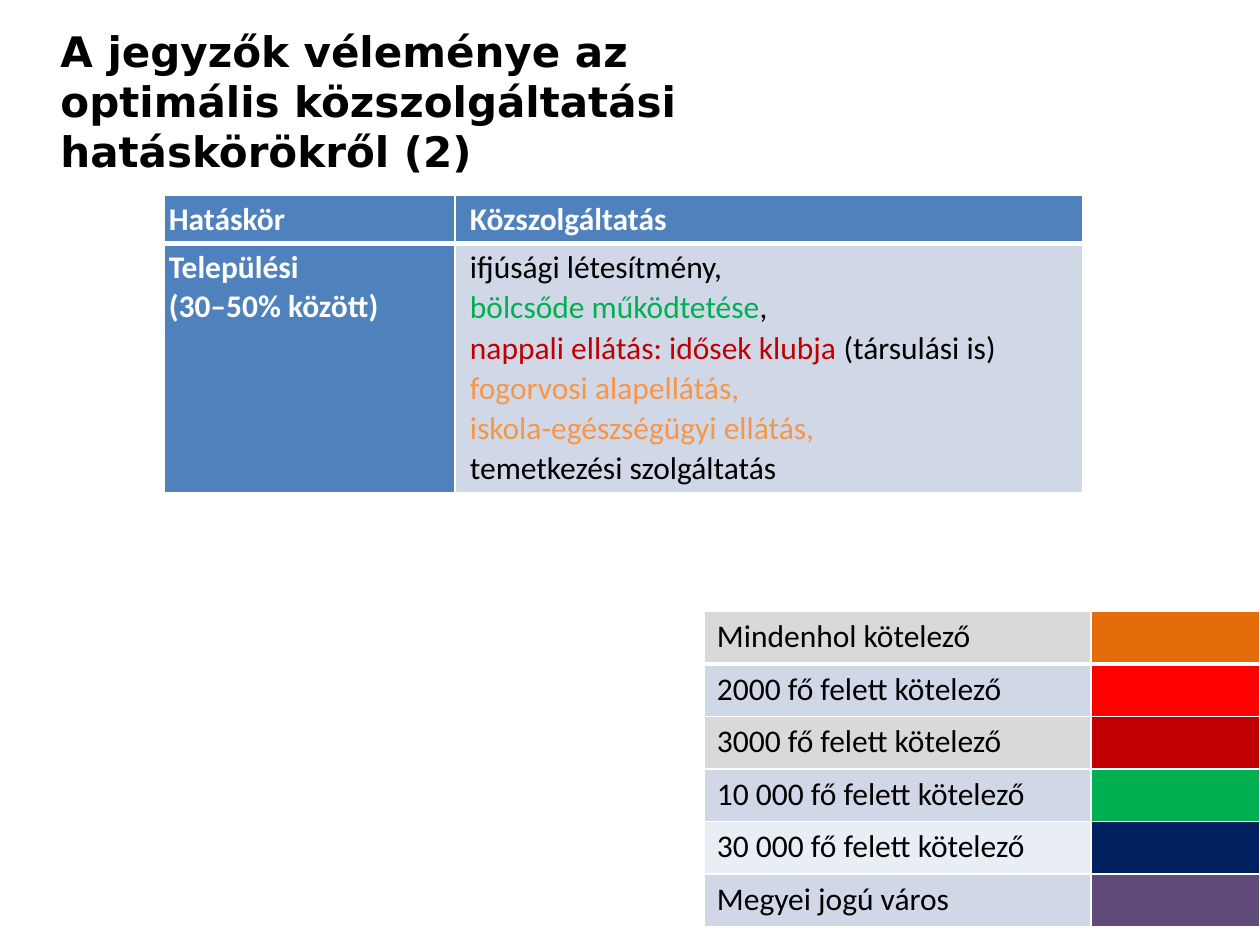
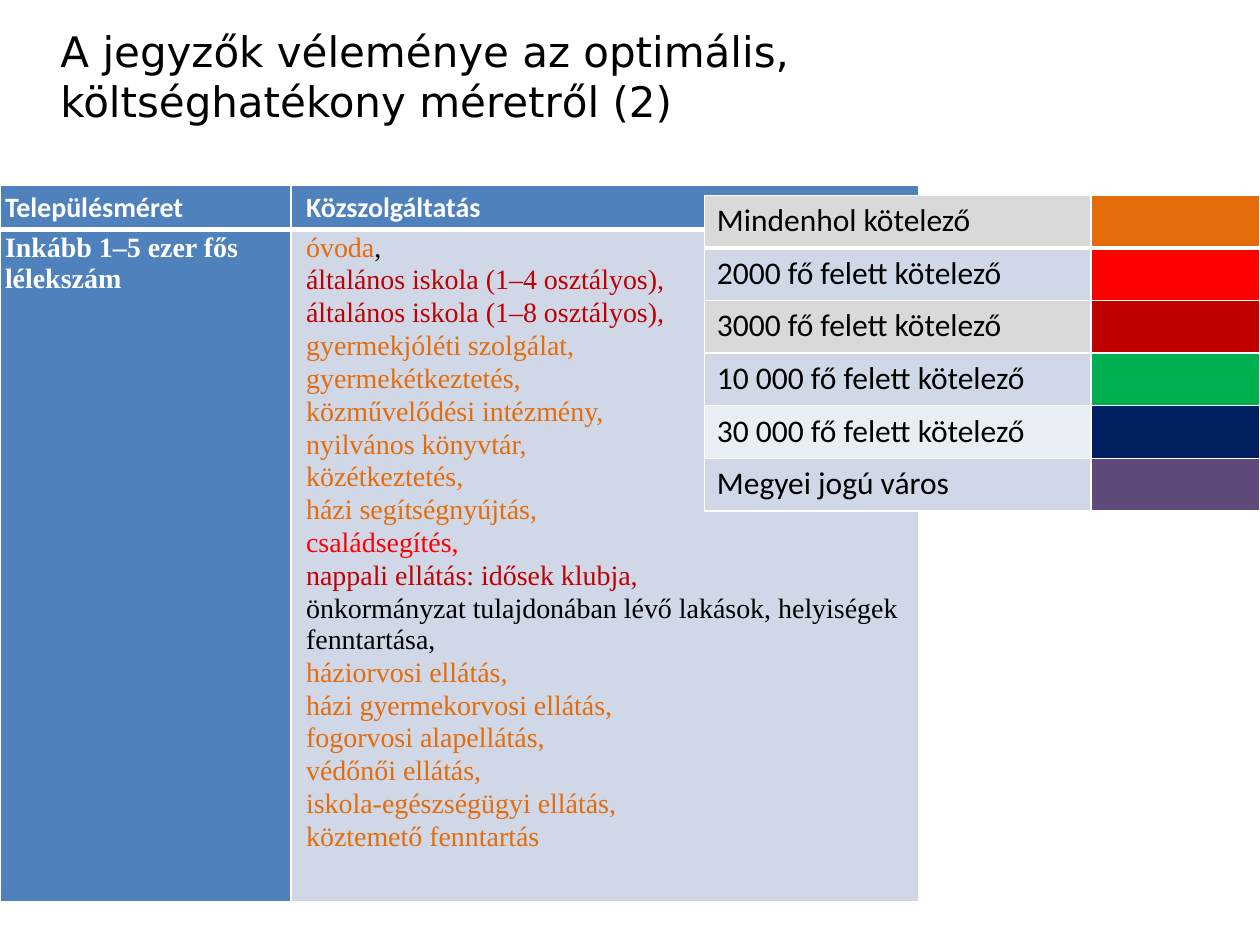
from dataclasses import dataclass

from lxml import etree
from pptx import Presentation
from pptx.dml.color import RGBColor
from pptx.enum.text import MSO_ANCHOR
from pptx.oxml.ns import qn
from pptx.slide import Slide
from pptx.table import Table, _Cell
from pptx.text.text import TextFrame
from pptx.util import Inches, Pt

MIDDLE, TOP = MSO_ANCHOR.MIDDLE, MSO_ANCHOR.TOP
WIDTH, HEIGHT = Inches(10), Inches(7.5)
BLANK_LAYOUT = 6

WHITE, BLACK = "FFFFFF", "000000"
HEADER_BLUE, PALE_BLUE, FAINT_BLUE, GRAY = "4F81BD", "D0D8E8", "E9EDF4", "D9D9D9"
ORANGE, LIGHT_ORANGE, RED, DARK_RED = "E46C0A", "F79646", "FF0000", "C00000"
GREEN, NAVY, PURPLE = "00B050", "002060", "604A7B"
SANS, SERIF, TITLE_FONT = "Calibri", "Times New Roman", "DejaVu Sans"

TITLE_BOX = (0, 0.02, 0.642, 0.095)
SERVICE_COLUMNS = (0.231, 0.498)
LEGEND_COLUMNS = (0.307, 0.134)
LEGEND_LEFT = 1 - sum(LEGEND_COLUMNS)
LEGEND_ROW = 0.0556


@dataclass(frozen=True)
class Piece:
    text: str
    color: str = BLACK


@dataclass(frozen=True)
class LegendRow:
    label: str
    fill: str
    swatch: str


@dataclass(frozen=True)
class ServiceTable:
    left: float
    top: float
    rows: tuple[float, float]
    heading: str
    category: str
    size: int
    body_font: str
    body_margin: float
    services: list[list[Piece]]


@dataclass(frozen=True)
class Page:
    title: str
    title_bold: bool
    table: ServiceTable
    legend_top: float


LEGEND = [
    LegendRow("Mindenhol kötelező", GRAY, ORANGE),
    LegendRow("2000 fő felett kötelező", PALE_BLUE, RED),
    LegendRow("3000 fő felett kötelező", GRAY, DARK_RED),
    LegendRow("10 000 fő felett kötelező", PALE_BLUE, GREEN),
    LegendRow("30 000 fő felett kötelező", FAINT_BLUE, NAVY),
    LegendRow("Megyei jogú város", PALE_BLUE, PURPLE),
]


def lines(color: str, *texts: str) -> list[list[Piece]]:
    return [[Piece(text, color)] for text in texts]


PAGES = [
    Page(
        "A jegyzők véleménye az optimális közszolgáltatási hatáskörökről (2)",
        True,
        ServiceTable(
            0.13, 0.207, (0.051, 0.263), "Hatáskör",
            "Települési\v(30–50% között)", 18, SANS, 0.04,
            [
                *lines(BLACK, "ifjúsági létesítmény,"),
                [Piece("bölcsőde működtetése", GREEN), Piece(",")],
                [Piece("nappali ellátás: idősek klubja", DARK_RED),
                 Piece(" (társulási is)")],
                *lines(LIGHT_ORANGE, "fogorvosi alapellátás,",
                       "iskola-egészségügyi ellátás,"),
                *lines(BLACK, "temetkezési szolgáltatás"),
            ],
        ),
        0.647,
    ),
    Page(
        "A jegyzők véleménye az optimális, költséghatékony méretről (2)",
        False,
        ServiceTable(
            0, 0.196, (0.047, 0.661), "Településméret",
            "Inkább 1–5 ezer fős lélekszám", 16, SERIF, 0.02,
            [
                [Piece("óvoda", ORANGE), Piece(",")],
                *lines(DARK_RED, "általános iskola (1–4 osztályos),",
                       "általános iskola (1–8 osztályos),"),
                *lines(ORANGE, "gyermekjóléti szolgálat,", "gyermekétkeztetés,",
                       "közművelődési intézmény,", "nyilvános könyvtár,",
                       "közétkeztetés,", "házi segítségnyújtás,"),
                *lines(RED, "családsegítés,"),
                *lines(DARK_RED, "nappali ellátás: idősek klubja,"),
                *lines(BLACK, "önkormányzat tulajdonában lévő lakások, "
                              "helyiségek fenntartása,"),
                *lines(ORANGE, "háziorvosi ellátás,", "házi gyermekorvosi ellátás,",
                       "fogorvosi alapellátás,", "védőnői ellátás,",
                       "iskola-egészségügyi ellátás,", "köztemető fenntartás"),
            ],
        ),
        0.207,
    ),
]


def rgb(color: str) -> RGBColor:
    return RGBColor.from_string(color)


def across(share: float) -> int:
    return round(WIDTH * share)


def down(share: float) -> int:
    return round(HEIGHT * share)


def apply(target: object, formats: dict) -> None:
    for name, value in formats.items():
        setattr(target, name, value)


def write(frame: TextFrame, paragraphs: list[list[Piece]], font: str, size: int,
          bold: bool = False) -> None:
    for index, pieces in enumerate(paragraphs):
        paragraph = frame.add_paragraph() if index else frame.paragraphs[0]
        if index:
            paragraph.space_before = Pt(1)
        for piece in pieces:
            for part, text in enumerate(piece.text.split("\v")):
                if part:
                    paragraph.add_line_break()
                run = paragraph.add_run()
                run.text = text
                apply(run.font, {"name": font, "size": Pt(size), "bold": bold})
                run.font.color.rgb = rgb(piece.color)


def style_cell(cell: _Cell, fill: str, is_header: bool) -> None:
    properties = cell._tc.get_or_add_tcPr()
    for side in "LRTB":
        points = 3 if is_header and side == "B" else 1
        border = etree.SubElement(properties, qn(f"a:ln{side}"), w=str(Pt(points)))
        solid = etree.SubElement(border, qn("a:solidFill"))
        etree.SubElement(solid, qn("a:srgbClr"), val=WHITE)
    cell.fill.solid()
    cell.fill.fore_color.rgb = rgb(fill)


def add_grid(slide: Slide, left: float, top: float, columns: tuple[float, ...],
             rows: tuple[float, ...], fills: list[tuple[str, str]]) -> Table:
    table = slide.shapes.add_table(
        len(rows), len(columns), across(left), down(top),
        across(sum(columns)), down(sum(rows))).table
    apply(table, {"first_row": False, "horz_banding": False})
    for column, share in zip(table.columns, columns):
        column.width = across(share)
    for row, share in zip(table.rows, rows):
        row.height = down(share)
    for row_index, row_fills in enumerate(fills):
        for column_index, fill in enumerate(row_fills):
            style_cell(table.cell(row_index, column_index), fill, row_index == 0)
    return table


def add_title(slide: Slide, title: str, bold: bool) -> None:
    left, top, width, height = TITLE_BOX
    frame = slide.shapes.add_textbox(
        across(left), down(top), across(width), down(height)).text_frame
    apply(frame, {"word_wrap": True, "margin_left": Inches(0.48)})
    write(frame, [[Piece(title)]], TITLE_FONT, 24, bold)


def add_services(slide: Slide, content: ServiceTable) -> None:
    table = add_grid(slide, content.left, content.top, SERVICE_COLUMNS, content.rows,
                     [(HEADER_BLUE, HEADER_BLUE), (HEADER_BLUE, PALE_BLUE)])
    texts = [
        [lines(WHITE, content.heading), lines(WHITE, "Közszolgáltatás")],
        [lines(WHITE, content.category), content.services],
    ]
    row_styles = [(SANS, 0.04, MIDDLE), (content.body_font, content.body_margin, TOP)]
    for row, (font, margin, anchor) in enumerate(row_styles):
        for column, paragraphs in enumerate(texts[row]):
            cell = table.cell(row, column)
            apply(cell, {
                "margin_left": Inches(0.12 if column else 0.04),
                "margin_right": Inches(0.04),
                "margin_top": Inches(margin),
                "margin_bottom": Inches(margin),
                "vertical_anchor": anchor,
            })
            is_bold = row == 0 or column == 0
            write(cell.text_frame, paragraphs, font, content.size, is_bold)


def add_legend(slide: Slide, top: float) -> None:
    table = add_grid(slide, LEGEND_LEFT, top, LEGEND_COLUMNS,
                     (LEGEND_ROW,) * len(LEGEND),
                     [(entry.fill, entry.swatch) for entry in LEGEND])
    for row, entry in enumerate(LEGEND):
        write(table.cell(row, 0).text_frame, lines(BLACK, entry.label), SANS, 18)


def main() -> None:
    presentation = Presentation()
    apply(presentation, {"slide_width": WIDTH, "slide_height": HEIGHT})
    for page in PAGES:
        slide = presentation.slides.add_slide(presentation.slide_layouts[BLANK_LAYOUT])
        add_title(slide, page.title, page.title_bold)
        add_services(slide, page.table)
        add_legend(slide, page.legend_top)
    presentation.save("out.pptx")


if __name__ == "__main__":
    main()
